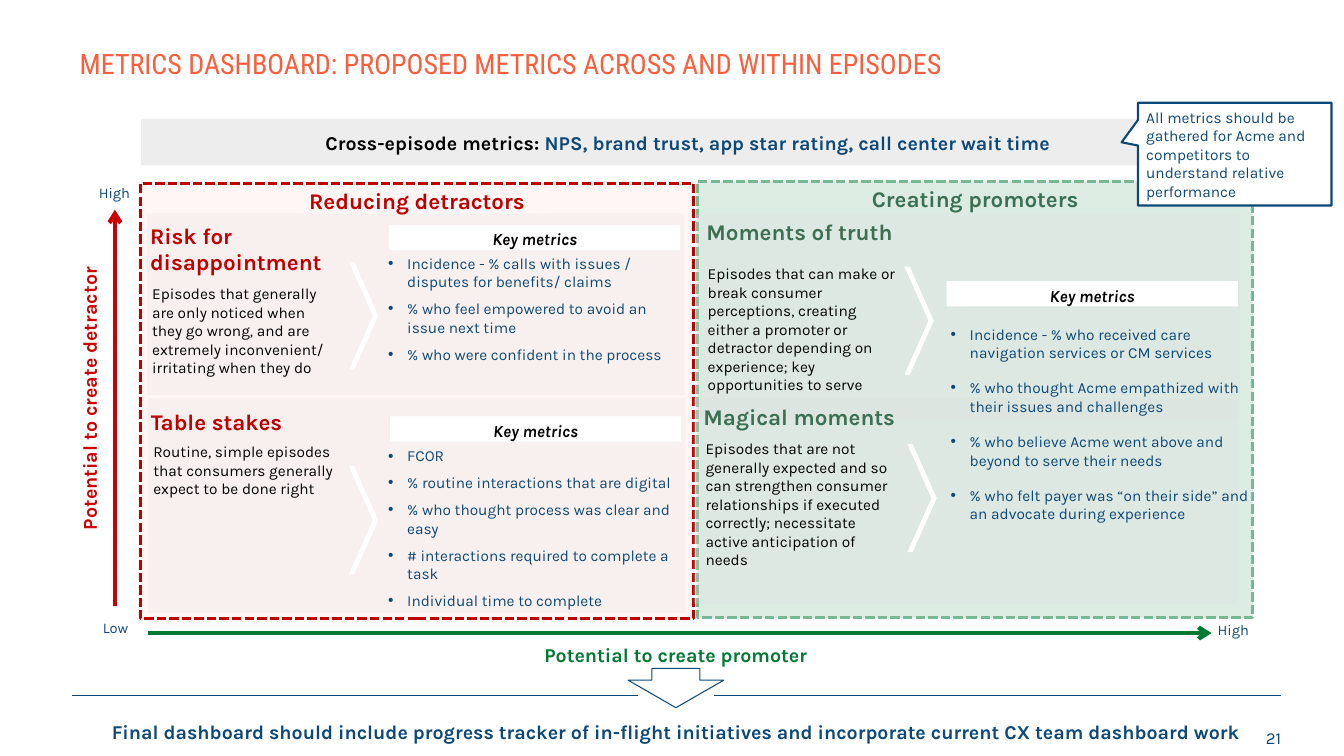
from lxml.etree import SubElement
from pptx import Presentation
from pptx.dml.color import RGBColor
from pptx.enum.dml import MSO_LINE
from pptx.enum.shapes import MSO_CONNECTOR, MSO_SHAPE
from pptx.enum.text import MSO_ANCHOR, MSO_AUTO_SIZE, PP_ALIGN
from pptx.oxml.ns import qn
from pptx.util import Pt

NAVY = RGBColor(0x0D, 0x48, 0x77)
ORANGE = RGBColor(0xFD, 0x5D, 0x3B)
BLACK = RGBColor(0x00, 0x00, 0x00)
WHITE = RGBColor(0xFF, 0xFF, 0xFF)
BAND_GRAY = RGBColor(0xDD, 0xDD, 0xDD)
HEADER_GRAY = RGBColor(0xED, 0xED, 0xED)
DARK_RED = RGBColor(0xC0, 0x00, 0x00)
AXIS_RED = RGBColor(0xCC, 0x00, 0x00)
PINK = RGBColor(0xFF, 0xDF, 0xD8)
DARK_GREEN = RGBColor(0x3C, 0x70, 0x52)
AXIS_GREEN = RGBColor(0x00, 0x79, 0x32)
LIGHT_GREEN = RGBColor(0x77, 0xB7, 0x92)

LEFT, CENTER, RIGHT = PP_ALIGN.LEFT, PP_ALIGN.CENTER, PP_ALIGN.RIGHT
TITLE = {"name": "Roboto Condensed", "size": Pt(20), "bold": False}
HEADING = {"name": "Karla", "size": Pt(16), "bold": True}
STRONG = {"name": "Karla", "size": Pt(14), "bold": True}
KEY = {"name": "Karla", "size": Pt(12), "bold": True, "italic": True}
NUMBER = {"name": "Karla", "size": Pt(12)}
BODY = {"name": "Karla", "size": Pt(11)}
SCALE = {"name": "Karla", "size": Pt(10.5)}
HEADING_INSETS = (7.2, 3.6, 3.6, 3.6)

presentation = Presentation()
presentation.slide_width, presentation.slide_height = Pt(960), Pt(540)
slide = presentation.slides.add_slide(presentation.slide_layouts[5])
shapes = slide.shapes


def add_box(bounds, fill=None, alpha=None, line=None, width=0.75, kind=MSO_SHAPE.RECTANGLE):
    shape = shapes.add_shape(kind, *map(Pt, bounds))
    shape.shadow.inherit = False
    if fill is None:
        shape.fill.background()
    else:
        shape.fill.solid()
        shape.fill.fore_color.rgb = fill
    if alpha:
        color = shape.fill._xPr.find(qn("a:solidFill"))[0]
        SubElement(color, qn("a:alpha"), val=str(alpha * 1000))
    if line is None:
        shape.line.fill.background()
    else:
        shape.line.color.rgb = line
        shape.line.width = Pt(width)
    return shape


def write(shape, paragraphs, style, color, align=LEFT, insets=(2.9,) * 4,
          anchor=MSO_ANCHOR.TOP, bullet_gap=None):
    """Each paragraph is a string, or a list of (text, colour) runs."""
    frame = shape.text_frame
    frame.word_wrap = True
    frame.auto_size = MSO_AUTO_SIZE.NONE
    frame.vertical_anchor = anchor
    for side, inset in zip(("left", "top", "right", "bottom"), insets):
        setattr(frame, f"margin_{side}", Pt(inset))
    for index, content in enumerate(paragraphs):
        paragraph = frame.add_paragraph() if index else frame.paragraphs[0]
        paragraph.alignment = align
        if bullet_gap:
            properties = paragraph._p.get_or_add_pPr()
            properties.set("marL", str(Pt(13.7)))
            properties.set("indent", str(-Pt(13.7)))
            SubElement(properties, qn("a:buFont"), typeface="Arial")
            SubElement(properties, qn("a:buChar"), char="•")
        paragraph.space_before = Pt(bullet_gap if bullet_gap and index else 0)
        runs = [(content, color)] if isinstance(content, str) else content
        for text, run_color in runs:
            run = paragraph.add_run()
            run.text = text
            for attribute, value in style.items():
                setattr(run.font, attribute, value)
            run.font.color.rgb = run_color


# Title
title = shapes.title
title.left, title.top, title.width, title.height = map(Pt, (54, 30.2, 696, 27.4))
write(title, ["METRICS DASHBOARD: PROPOSED METRICS ACROSS AND WITHIN EPISODES"], TITLE, ORANGE)

# Tinted bands and dashed panels
for bounds in ((105.1, 152.6, 383.8, 129.6), (105.8, 284.4, 383.8, 153.4)):
    add_box(bounds, BAND_GRAY, 25)
for bounds, fill, line, color, heading in (
    ((498.2, 129.6, 396.7, 311.8), LIGHT_GREEN, LIGHT_GREEN, DARK_GREEN, "Creating promoters"),
    ((100.1, 131, 395.6, 311), PINK, DARK_RED, DARK_RED, "Reducing detractors"),
):
    panel = add_box(bounds, fill, 25, line, 2.25)
    panel.line.dash_style = MSO_LINE.SQUARE_DOT
    write(panel, [heading], HEADING, color, CENTER)

# Promoter bands with headings
for bounds, heading in (
    ((497.5, 152.6, 388, 146.9), "Moments of truth"),
    ((495.4, 284.4, 388, 146.9), "Magical moments"),
):
    write(add_box(bounds, BAND_GRAY, 25), [heading], HEADING, DARK_GREEN, insets=HEADING_INSETS)

# Detractor axis label
axis_label = add_box((-54, 274.3, 234.7, 20.9), WHITE)
axis_label.rotation = 270
write(axis_label, ["Potential to create detractor"], STRONG, AXIS_RED, CENTER, (2.2,) * 4)

# Plain text: headings, axis labels, descriptions, conclusion, page number
for bounds, text, style, color, align, insets in (
    ((100.1, 154.8, 155.5, 146.9), "Risk for disappointment", HEADING, DARK_RED, LEFT, HEADING_INSETS),
    ((100.8, 288, 388, 146.9), "Table stakes", HEADING, DARK_RED, LEFT, HEADING_INSETS),
    ((867.6, 441.4, 39.6, 16.6), "High", SCALE, NAVY, LEFT, (2.2,) * 4),
    ((68.4, 128.9, 39.6, 16.6), "High", SCALE, NAVY, LEFT, (2.2,) * 4),
    ((71.3, 439.9, 39.6, 16.6), "Low", SCALE, NAVY, LEFT, (2.2,) * 4),
    ((373.7, 457.2, 218.2, 20.9), "Potential to create promoter", STRONG, AXIS_GREEN, CENTER, (2.2,) * 4),
    ((105.8, 200.2, 136.8, 72.7), "Episodes that generally are only noticed when they go wrong, and are "
     "extremely inconvenient/ irritating when they do", BODY, BLACK, LEFT, (2.9,) * 4),
    ((502.6, 185.8, 140.4, 124.6), "Episodes that can make or break consumer perceptions, creating either a "
     "promoter or detractor depending on experience; key opportunities to serve", BODY, BLACK, LEFT, (2.9,) * 4),
    ((106.6, 313.2, 136.8, 45.4), "Routine, simple episodes that consumers generally expect to be done right",
     BODY, BLACK, LEFT, (2.9,) * 4),
    ((501.1, 311, 139.7, 99.4), "Episodes that are not generally expected and so can strengthen consumer "
     "relationships if executed correctly; necessitate active anticipation of needs",
     BODY, BLACK, LEFT, (2.9,) * 4),
    ((51.1, 511, 864, 25), "Final dashboard should include progress tracker of in-flight initiatives and "
     "incorporate current CX team dashboard work", STRONG, NAVY, CENTER, (2.9,) * 4),
    ((879.8, 517, 38.2, 20.2), "21", NUMBER, NAVY, RIGHT, (2.9,) * 4),
):
    write(shapes.add_textbox(*map(Pt, bounds)), [text], style, color, align, insets)

# Axis arrows and divider lines
for ends, color, width, has_arrow in (
    ((82.1, 432.7, 82.1, 149.8), AXIS_RED, 3, True),
    ((105.8, 452.2, 865.4, 452.2), AXIS_GREEN, 3, True),
    ((51.1, 496.8, 455.8, 496.8), NAVY, 0.75, False),
    ((509.8, 496.8, 915.1, 496.8), NAVY, 0.75, False),
):
    connector = shapes.add_connector(MSO_CONNECTOR.STRAIGHT, *map(Pt, ends))
    connector.line.color.rgb = color
    connector.line.width = Pt(width)
    if has_arrow:
        SubElement(connector.line._get_or_add_ln(), qn("a:tailEnd"), type="arrow")
    SubElement(connector._element.spPr, qn("a:effectLst"))

# White chevrons between descriptions and metrics
for left, top in ((249.8, 187.2), (249.8, 333.4), (646.6, 190.8), (648.7, 317.5)):
    outline = [(Pt(left + x), Pt(top + y)) for x, y in
               ((3, 0), (20, 38.3), (3, 76.6), (0, 76.6), (17, 38.3), (0, 0))]
    builder = shapes.build_freeform(*outline[0])
    builder.add_line_segments(outline[1:], close=True)
    chevron = builder.convert_to_shape()
    chevron.shadow.inherit = False
    chevron.fill.solid()
    chevron.fill.fore_color.rgb = WHITE
    chevron.line.color.rgb = WHITE
    chevron.line.width = Pt(0.75)

# Arrow to the conclusion
down_arrow = add_box((448.6, 477.4, 68.4, 28.1), line=NAVY, kind=MSO_SHAPE.DOWN_ARROW)
down_arrow.adjustments[0], down_arrow.adjustments[1] = 0.5, 0.7

# Cross-episode header
header = add_box((100.8, 85, 781.2, 33.1), HEADER_GRAY)
write(header, [[("Cross-episode metrics: ", BLACK),
                ("NPS, brand trust, app star rating, call center wait time", NAVY)]],
      STRONG, BLACK, CENTER, anchor=MSO_ANCHOR.MIDDLE)

# Key metrics: label position, list bounds, paragraph gap, bullets
for label_left, label_top, bounds, gap, metrics in (
    (277.9, 160.6, (274.3, 178.6, 218.2, 84.2), 6, [
        "Incidence - % calls with issues / disputes for benefits/ claims",
        "% who feel empowered to avoid an issue next time",
        "% who were confident in the process"]),
    (278.6, 297.4, (274.3, 316.1, 222.5, 130), 6, [
        "FCOR",
        "% routine interactions that are digital",
        "% who thought process was clear and easy",
        "# interactions required to complete a task",
        "Individual time to complete"]),
    (676.1, 200.9, (676.1, 229, 222.5, 149), 12, [
        "Incidence - % who received care navigation services or CM services",
        "% who thought Acme empathized with their issues and challenges",
        "% who believe Acme went above and beyond to serve their needs",
        "% who felt payer was “on their side” and an advocate during experience"]),
):
    write(add_box((label_left, label_top, 208.1, 18), WHITE), ["Key metrics"], KEY, BLACK, CENTER)
    write(shapes.add_textbox(*map(Pt, bounds)), metrics, BODY, NAVY, bullet_gap=gap)

# Callout
callout = add_box((812.9, 73.4, 138.2, 73.4), WHITE, None, NAVY, 1.5, MSO_SHAPE.RECTANGULAR_CALLOUT)
callout.adjustments[0], callout.adjustments[1] = -0.585, -0.115
write(callout, ["All metrics should be gathered for Acme and competitors to understand relative performance"],
      BODY, NAVY, insets=(5.8,) * 4, anchor=MSO_ANCHOR.MIDDLE)

presentation.save("out.pptx")
